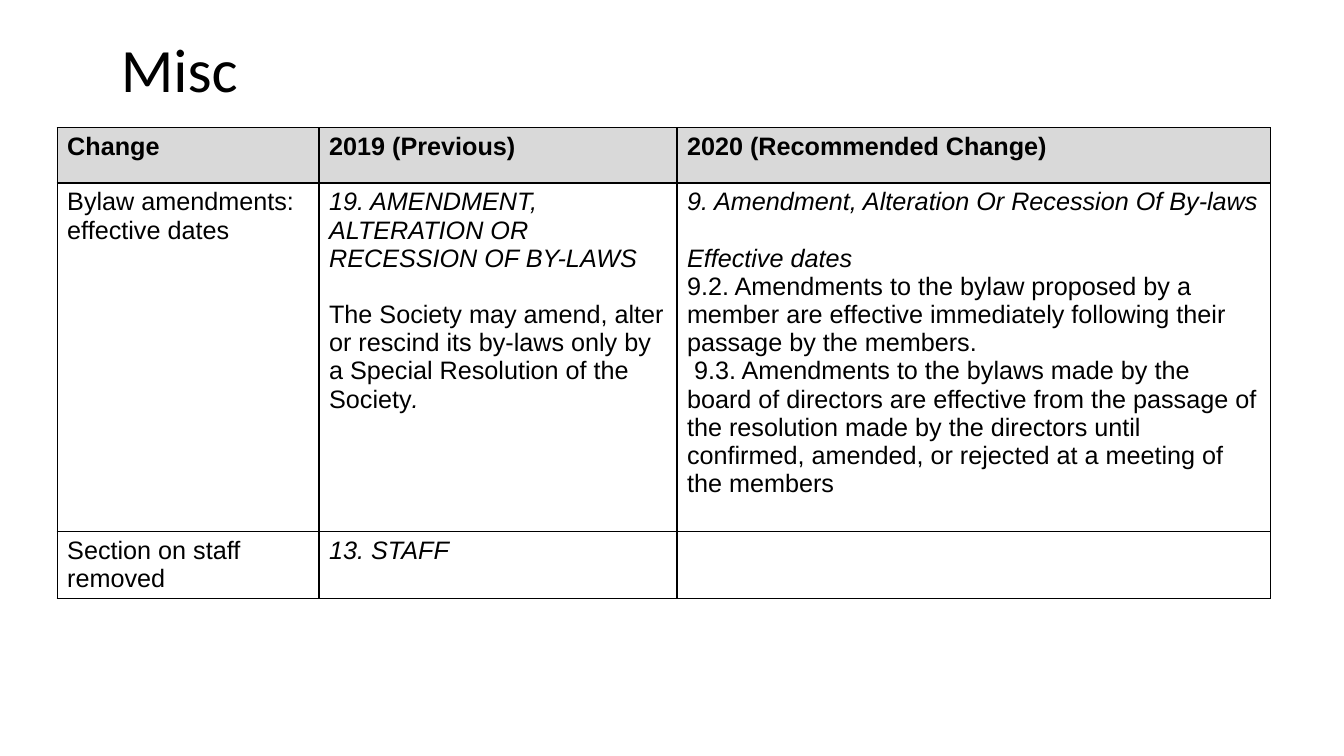
from lxml import etree
from pptx import Presentation
from pptx.dml.color import RGBColor
from pptx.enum.text import MSO_ANCHOR, PP_ALIGN
from pptx.oxml.ns import qn
from pptx.util import Cm, Pt

LEFT = PP_ALIGN.LEFT
MIDDLE = MSO_ANCHOR.MIDDLE
TITLE_ONLY = 5

BLACK, WHITE, HEADER_GRAY = "000000", "FFFFFF", "D9D9D9"
BODY_SIZE = Pt(18)
HEADING_GAP = Pt(20)
COLUMN_WIDTHS = [Cm(6.6), Cm(9.02), Cm(14.96)]
ROW_HEIGHTS = [Cm(1.39), Cm(8.79), Cm(1.68)]

# Each cell is a list of paragraphs: (runs, space after), each run (text, style).
HEADERS = ["Change", "2019 (Previous)", "2020 (Recommended Change)"]
ROWS = [
    [[([(header, "bold")], 0)] for header in HEADERS],
    [
        [([("Bylaw amendments: effective dates", "")], 0)],
        [
            ([("19. AMENDMENT, ALTERATION OR RECESSION OF BY-LAWS", "italic")], HEADING_GAP),
            ([("The Society may amend, alter or rescind its by-laws only by "
               "a Special Resolution of the Society", ""), (".", "italic")], 0),
        ],
        [
            ([("9. Amendment, Alteration Or Recession Of By-laws", "italic")], HEADING_GAP),
            ([("Effective dates", "italic")], 0),
            ([("9.2. Amendments to the bylaw proposed by a member are effective "
               "immediately following their passage by the members.", "")], 0),
            ([(" 9.3. Amendments to the bylaws made by the board of directors are "
               "effective from the passage of the resolution made by the directors "
               "until confirmed, amended, or rejected at a meeting of the members", "")], 0),
        ],
    ],
    [
        [([("Section on staff removed", "")], 0)],
        [([("13. STAFF", "italic")], 0)],
        [([], 0)],
    ],
]


def color(hex_string):
    return RGBColor.from_string(hex_string)


def add_run(paragraph, text, font_name, size, style=""):
    run = paragraph.add_run()
    run.text = text
    run.font.name = font_name
    run.font.size = size
    run.font.color.rgb = color(BLACK)
    run.font.bold = style == "bold"
    run.font.italic = style == "italic"


def add_title(slide, text):
    title = slide.shapes.title
    title.left, title.top = Cm(2.79), Cm(0)
    title.width, title.height = Cm(29.21), Cm(3.68)
    title.text_frame.vertical_anchor = MIDDLE
    paragraph = title.text_frame.paragraphs[0]
    paragraph.alignment = LEFT
    paragraph.line_spacing = 0.9
    add_run(paragraph, text, "Calibri", Pt(44))


def add_borders(cell):
    properties = cell._tc.get_or_add_tcPr()
    for side in ("a:lnL", "a:lnR", "a:lnT", "a:lnB"):
        line = etree.SubElement(properties, qn(side), w=str(Pt(1)))
        fill = etree.SubElement(line, qn("a:solidFill"))
        etree.SubElement(fill, qn("a:srgbClr"), val=BLACK)


def fill_cell(cell, paragraphs, background):
    add_borders(cell)
    cell.fill.solid()
    cell.fill.fore_color.rgb = color(background)
    text_frame = cell.text_frame
    for index, (runs, space_after) in enumerate(paragraphs):
        paragraph = text_frame.add_paragraph() if index else text_frame.paragraphs[0]
        paragraph.font.size = BODY_SIZE
        paragraph.space_after = space_after
        for text, style in runs:
            add_run(paragraph, text, "Arial", BODY_SIZE, style)


def add_bylaw_table(slide):
    frame = slide.shapes.add_table(len(ROWS), len(HEADERS), Cm(1.44), Cm(3.22),
                                   sum(COLUMN_WIDTHS), sum(ROW_HEIGHTS))
    table = frame.table
    table.first_row = table.horz_banding = False
    for column, width in zip(table.columns, COLUMN_WIDTHS):
        column.width = width
    for row_index, (row, height) in enumerate(zip(table.rows, ROW_HEIGHTS)):
        row.height = height
        background = WHITE if row_index else HEADER_GRAY
        for cell, paragraphs in zip(row.cells, ROWS[row_index]):
            fill_cell(cell, paragraphs, background)


def main():
    presentation = Presentation()
    presentation.slide_width, presentation.slide_height = Cm(33.87), Cm(19.05)
    slide = presentation.slides.add_slide(presentation.slide_layouts[TITLE_ONLY])
    add_title(slide, "Misc")
    add_bylaw_table(slide)
    presentation.save("out.pptx")


if __name__ == "__main__":
    main()
